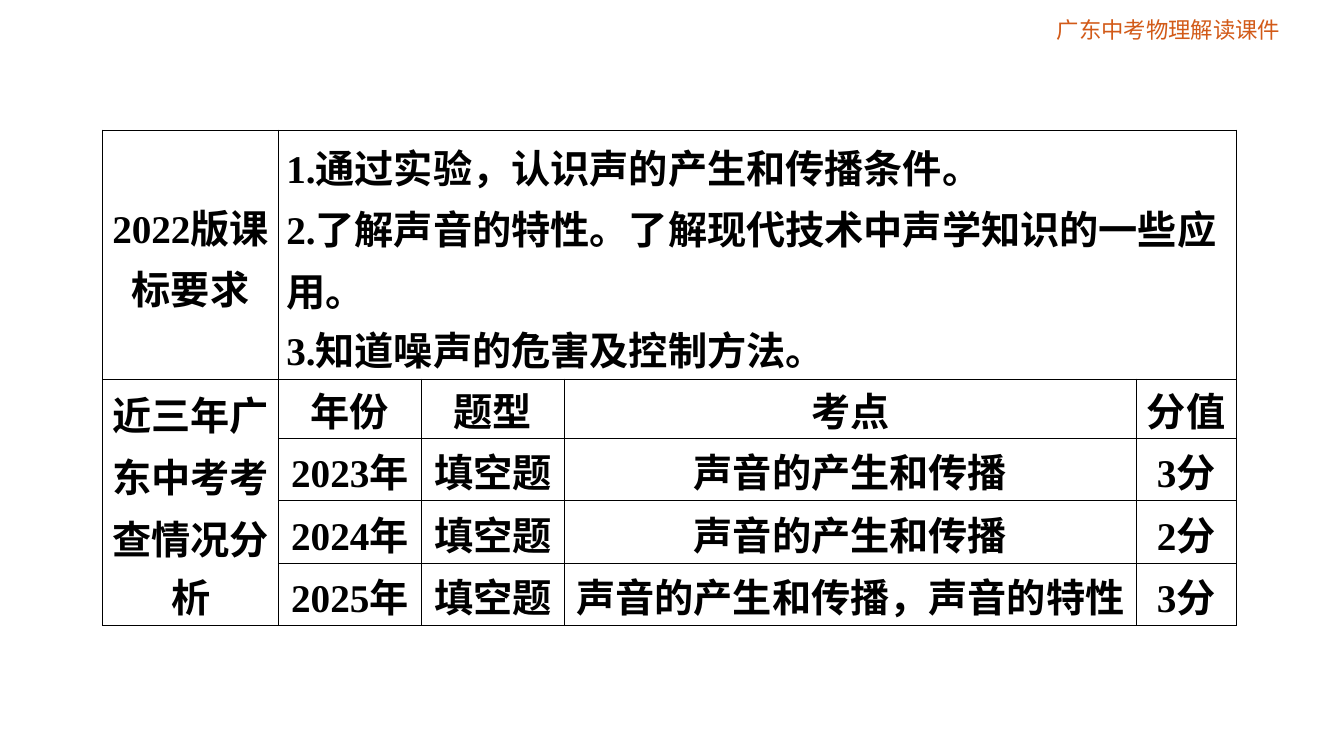
import pptx
import pptx.util
import pptx.dml.color
import pptx.enum.text
from dataclasses import dataclass
from lxml import etree
from pptx.util import Inches, Pt

ALIGN = pptx.enum.text.PP_ALIGN
MIDDLE = pptx.enum.text.MSO_ANCHOR.MIDDLE


@dataclass(frozen=True)
class Theme:
    font: str = "Times New Roman"
    banner_color: str = "D25A18"
    ink: str = "000000"
    banner_size: int = 16
    table_size: int = 28
    line_gap: int = 44
    last_gap: int = 42
    border: float = 0.75


THEME = Theme()

STANDARD_LABEL = ["2022版课", "标要求"]
STANDARD_ITEMS = [
    "1.通过实验，认识声的产生和传播条件。",
    "2.了解声音的特性。了解现代技术中声学知识的一些应",
    "用。",
    "3.知道噪声的危害及控制方法。",
]
EXAM_LABEL = ["近三年广", "东中考考", "查情况分", "析"]
EXAM_ROWS = [
    ["年份", "题型", "考点", "分值"],
    ["2023年", "填空题", "声音的产生和传播", "3分"],
    ["2024年", "填空题", "声音的产生和传播", "2分"],
    ["2025年", "填空题", "声音的产生和传播，声音的特性", "3分"],
]
COL_WIDTHS = [1.74, 1.42, 1.42, 5.67, 0.99]
ROW_HEIGHTS = [2.47, 0.59, 0.62, 0.62, 0.62]


def set_font(p, size, color, bold=False):
    p.font.name = THEME.font
    p.font.size = Pt(size)
    p.font.bold = bold
    p.font.color.rgb = pptx.dml.color.RGBColor.from_string(color)


def add_banner(s, text):
    box = s.shapes.add_textbox(Inches(10.02), Inches(0.15), Inches(3.14), Inches(0.28))
    tf = box.text_frame
    tf.word_wrap = True
    tf.vertical_anchor = MIDDLE
    tf.margin_left = tf.margin_right = tf.margin_top = tf.margin_bottom = 0
    p = tf.paragraphs[0]
    p.text = text
    p.alignment = ALIGN.CENTER
    set_font(p, THEME.banner_size, THEME.banner_color)


def style_cell(cell):
    tc_pr = cell._tc.get_or_add_tcPr()
    for side in ("lnL", "lnR", "lnT", "lnB"):
        ln = etree.SubElement(tc_pr, pptx.oxml.ns.qn(f"a:{side}"), w=str(Pt(THEME.border)))
        fill = etree.SubElement(ln, pptx.oxml.ns.qn("a:solidFill"))
        etree.SubElement(fill, pptx.oxml.ns.qn("a:srgbClr"), val=THEME.ink)
    cell.fill.background()
    cell.vertical_anchor = MIDDLE
    cell.margin_left = cell.margin_right = Inches(0.08)
    cell.margin_top = cell.margin_bottom = 0


def write_cell(cell, lines, align=ALIGN.CENTER, last_gap=THEME.last_gap):
    tf = cell.text_frame
    tf.text = "\n".join(lines)
    for p in tf.paragraphs:
        p.alignment = align
        p.line_spacing = Pt(THEME.line_gap)
        set_font(p, THEME.table_size, THEME.ink, bold=True)
    tf.paragraphs[-1].line_spacing = Pt(last_gap)


def add_exam_table(s):
    frame = s.shapes.add_table(
        len(ROW_HEIGHTS), len(COL_WIDTHS), Inches(1.02), Inches(1.29),
        Inches(sum(COL_WIDTHS)), Inches(sum(ROW_HEIGHTS)))
    table = frame.table
    table.first_row = table.horz_banding = False
    for col, width in zip(table.columns, COL_WIDTHS):
        col.width = Inches(width)
    for row, height in zip(table.rows, ROW_HEIGHTS):
        row.height = Inches(height)
    for cell in table.iter_cells():
        style_cell(cell)

    table.cell(0, 1).merge(table.cell(0, 4))
    table.cell(1, 0).merge(table.cell(4, 0))
    write_cell(table.cell(0, 0), STANDARD_LABEL, last_gap=43)
    write_cell(table.cell(0, 1), STANDARD_ITEMS, align=ALIGN.LEFT)
    write_cell(table.cell(1, 0), EXAM_LABEL)
    for i, row in enumerate(EXAM_ROWS, start=1):
        for j, text in enumerate(row, start=1):
            write_cell(table.cell(i, j), [text])


def main():
    prs = pptx.Presentation()
    prs.slide_width = Inches(13.33)
    prs.slide_height = Inches(7.5)
    s = prs.slides.add_slide(prs.slide_layouts[6])
    add_banner(s, "广东中考物理解读课件")
    add_exam_table(s)
    prs.save("out.pptx")


if __name__ == "__main__":
    main()
